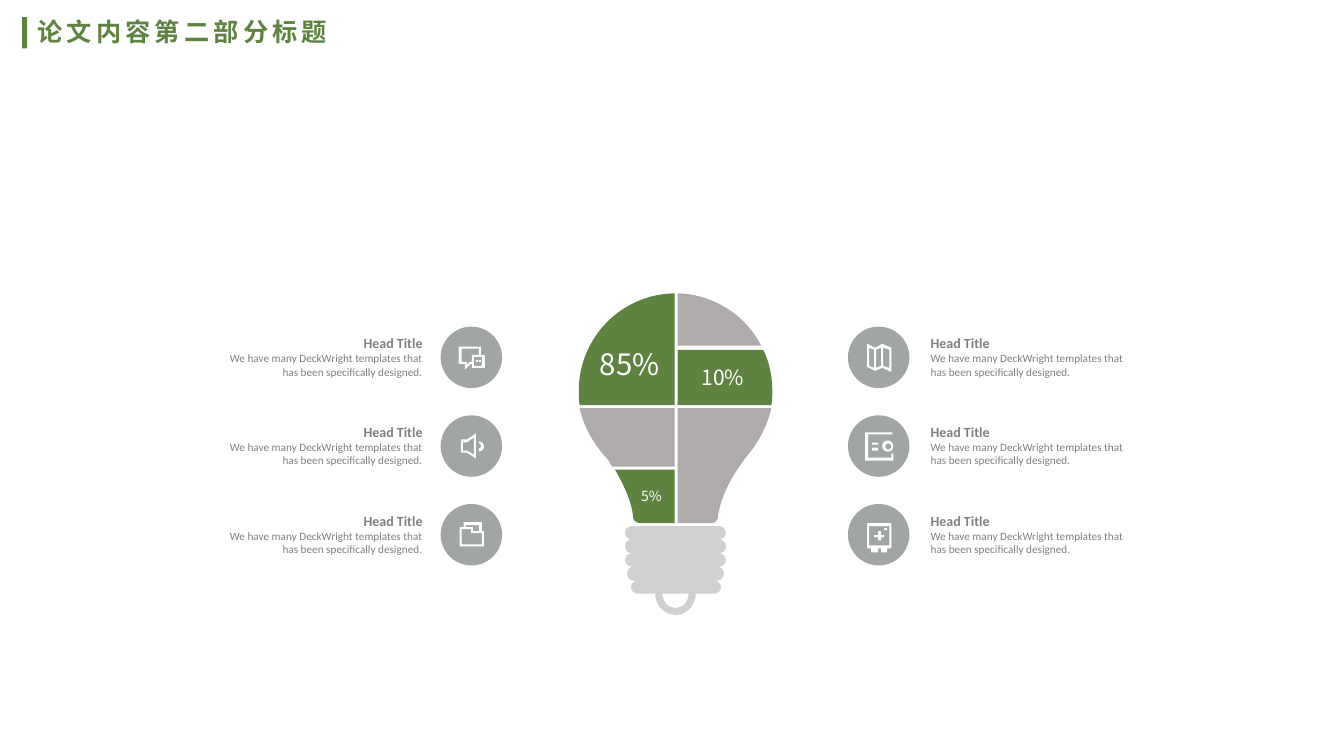
import math
from dataclasses import dataclass

from lxml import etree
from pptx import Presentation
from pptx.dml.color import RGBColor
from pptx.enum.shapes import MSO_SHAPE
from pptx.enum.text import MSO_ANCHOR, MSO_AUTO_SIZE, PP_ALIGN
from pptx.oxml.ns import qn
from pptx.util import Emu, Pt

PX = 9144  # EMU in one px, 100 px to the inch
OVAL, RECT = MSO_SHAPE.OVAL, MSO_SHAPE.RECTANGLE
LEFT, RIGHT = PP_ALIGN.LEFT, PP_ALIGN.RIGHT
TOP, MIDDLE = MSO_ANCHOR.TOP, MSO_ANCHOR.MIDDLE
GROW = MSO_AUTO_SIZE.SHAPE_TO_FIT_TEXT

# A contour holds (x, y) corners and six-number cubic curves
Contour = list[tuple[float, ...]]
Box = tuple[int, int, int, int]


@dataclass(frozen=True)
class Theme:
    green: str = "5E8240"
    warm_gray: str = "AFABAB"
    disc: str = "A1A5A3"
    base: str = "181717"
    text: str = "808080"
    white: str = "FFFFFF"
    latin: str = "Calibri"
    cjk: str = "Noto Sans CJK SC"
    title_size: int = 18
    head_size: int = 10
    body_size: int = 8
    share_sizes: tuple[int, int, int] = (21, 15, 10)


@dataclass(frozen=True)
class Icon:
    """Outlines and bars measured from the corner of the icon's disc."""
    outlines: list[list[Contour]]
    bars: tuple[Box, ...] = ()


@dataclass(frozen=True)
class Column:
    disc_x: int
    text_x: int
    align: PP_ALIGN
    icons: tuple[Icon, ...]


@dataclass(frozen=True)
class Pane:
    color: str
    contour: Contour


@dataclass(frozen=True)
class Share:
    text: str
    box: Box


THEME = Theme()


def arc(box: Box, start: int, end: int) -> Contour:
    """Points on the ellipse within left, top, right, bottom; degrees run clockwise."""
    left, top, right, bottom = box
    angles = [math.radians(start + (end - start) * step / 24) for step in range(25)]
    return [((left + right + (right - left) * math.cos(angle)) / 2,
             (top + bottom + (bottom - top) * math.sin(angle)) / 2) for angle in angles]


def flatten(contour: Contour) -> Contour:
    points: Contour = []
    for node in contour:
        if len(node) == 2:
            points.append(node)
            continue
        knots = [points[-1], node[:2], node[2:4], node[4:]]
        for step in range(1, 25):
            t = step / 24
            weights = ((1 - t) ** 3, 3 * t * (1 - t) ** 2, 3 * t * t * (1 - t), t ** 3)
            points.append(tuple(sum(w * knot[axis] for w, knot in zip(weights, knots))
                                for axis in (0, 1)))
    return points


def paint(shape, color: str, opacity: int = 100) -> None:
    shape.shadow.inherit = False
    shape.line.fill.background()
    shape.fill.solid()
    shape.fill.fore_color.rgb = RGBColor.from_string(color)
    if opacity < 100:
        tint = shape._element.spPr.find(".//" + qn("a:srgbClr"))
        etree.SubElement(tint, qn("a:alpha")).set("val", str(opacity * 1000))


def add_preset(page, kind: MSO_SHAPE, box: Box, color: str) -> None:
    paint(page.shapes.add_shape(kind, *(Emu(value * PX) for value in box)), color)


def add_outline(page, contours: list[Contour], color: str, x: int = 0, y: int = 0,
                opacity: int = 100) -> None:
    builder = None
    for contour in contours:
        points = [(round((x + px) * PX), round((y + py) * PX)) for px, py in flatten(contour)]
        if builder is None:
            builder = page.shapes.build_freeform(*points[0], scale=1.0)
        else:
            builder.move_to(*points[0])
        builder.add_line_segments(points[1:], close=True)
    paint(builder.convert_to_shape(), color, opacity)


def write(para, text: str, *, size: int, color: str, font: str = THEME.latin,
          bold: bool = False, align: PP_ALIGN = LEFT, spacing: int = 0) -> None:
    para.alignment = align
    span = para.add_run()
    span.text = text
    span.font.size, span.font.bold, span.font.name = Pt(size), bold, font
    span.font.color.rgb = RGBColor.from_string(color)
    if spacing:
        span._r.get_or_add_rPr().set("spc", str(spacing * 100))


def add_text_frame(page, box: Box, wrap: bool):
    frame = page.shapes.add_textbox(*(Emu(value * PX) for value in box)).text_frame
    frame.margin_left = frame.margin_top = frame.margin_right = frame.margin_bottom = 0
    frame.word_wrap, frame.auto_size, frame.vertical_anchor = wrap, GROW, TOP
    return frame


# Icons
CHAT = Icon([[
    [(40, 28), (40, 20), (18, 20), (18, 37), (24, 37), (24, 43), (30, 37), (31, 37),
     (31, 41), (44, 41), (44, 28)],
    [(29, 35), (26, 38), (26, 35), (21, 35), (21, 22), (38, 22), (38, 28), (31, 28), (31, 35)],
    [(41, 39), (33, 39), (33, 30), (41, 30)]]], ((35, 33, 2, 2), (38, 33, 2, 2)))
SPEAKER = Icon([
    [[(20, 24), (20, 37), (26, 37), (35, 43), (35, 18), (26, 24)],
     [(33, 22), (33, 39), (26, 35), (22, 35), (22, 27), (26, 27)]],
    [arc((33, 26, 43, 36), -90, 90) + arc((36, 28, 40, 33), 90, -90)]])
FOLDER = Icon([[
    [(41, 27), (41, 18), (23, 18), (23, 23), (19, 23), (19, 42), (43, 42), (43, 27)],
    [(25, 21), (38, 21), (38, 27), (32, 27), (32, 23), (25, 23)],
    [(41, 40), (21, 40), (21, 25), (30, 25), (30, 29), (41, 29)]]])
MAP = Icon([[
    [(34, 17), (27, 21), (19, 17), (19, 40), (27, 44), (34, 41), (43, 45), (43, 21)],
    [(28, 23), (33, 21), (33, 39), (28, 41)],
    [(21, 21), (26, 23), (26, 41), (21, 39)],
    [(41, 41), (35, 39), (35, 21), (41, 23)]]])
CARD = Icon([
    [[(43, 42), (20, 42), (20, 19), (44, 19), (44, 17), (17, 17), (17, 45), (45, 45),
      (45, 38), (43, 38)]],
    [arc((34, 25, 45, 36), 0, 360), arc((37, 28, 43, 34), 0, 360)]],
    ((24, 27, 6, 2), (24, 32, 6, 3)))
SAFE = Icon([
    [[(43, 19), (19, 19), (19, 44), (23, 44), (23, 48), (30, 48), (30, 44), (33, 44),
      (33, 48), (39, 48), (39, 44), (43, 44)],
     [(41, 41), (21, 41), (21, 22), (41, 22)]],
    [[(30, 36), (33, 36), (33, 33), (36, 33), (36, 31), (33, 31), (33, 27), (30, 27),
      (30, 31), (26, 31), (26, 33), (30, 33)]]], ((36, 24, 3, 2),))

COLUMNS = (Column(437, 214, RIGHT, (CHAT, SPEAKER, FOLDER)),
           Column(841, 923, LEFT, (MAP, CARD, SAFE)))
DISC_TOP, DISC_SIZE, ROW_PITCH = 324, 61, 88

# Bulb glass, its shares and the ridges (left, top, right, bottom) of its base
PANES = (
    Pane(THEME.green, [(628, 513), (628, 516, 631, 519, 635, 519), (669, 519), (669, 466),
                       (610, 466), (616, 477, 626, 494, 628, 513)]),
    Pane(THEME.warm_gray, [(575, 405), (579, 423, 588, 440, 603, 456),
                           (603, 456, 605, 459, 607, 463), (669, 463), (669, 405)]),
    Pane(THEME.green, [(669, 402), (669, 291), (616, 292, 574, 335, 574, 388),
                       (574, 393, 574, 397, 575, 402)]),
    Pane(THEME.warm_gray, [(672, 405), (672, 519), (706, 519), (709, 519, 712, 516, 712, 513),
                           (716, 483, 738, 457, 738, 456), (752, 440, 761, 423, 765, 405)]),
    Pane(THEME.warm_gray, [(755, 343), (740, 313, 708, 292, 672, 291), (672, 343)]),
    Pane(THEME.green, [(672, 347), (672, 402), (765, 402), (766, 397, 766, 393, 766, 388),
                       (766, 373, 763, 359, 757, 347)]),
)
SHARES = (Share("85%", (595, 343, 60, 35)), Share("10%", (696, 362, 43, 25)),
          Share("5%", (636, 484, 24, 17)))
RIDGES = ((620, 522, 720, 535), (620, 535, 720, 549), (620, 549, 720, 562),
          (622, 562, 718, 576), (626, 576, 715, 589))


def add_base(page) -> None:
    outline: Contour = []
    for left, top, right, bottom in RIDGES:
        outline += arc((right - 14, top, right, bottom), -90, 90)
    outline += arc((650, 568, 690, 610), 0, 180)
    for left, top, right, bottom in reversed(RIDGES):
        outline += arc((left, top, left + 14, bottom), 90, 270)
    add_outline(page, [outline, arc((657, 575, 683, 603), 0, 180)], THEME.base, opacity=20)


def add_column(page, column: Column) -> None:
    for row, icon in enumerate(column.icons):
        x, y = column.disc_x, DISC_TOP + row * ROW_PITCH
        add_preset(page, OVAL, (x, y, DISC_SIZE, DISC_SIZE), THEME.disc)
        for contours in icon.outlines:
            add_outline(page, contours, THEME.white, x, y)
        for left, top, width, height in icon.bars:
            add_preset(page, RECT, (x + left, y + top, width, height), THEME.white)
        frame = add_text_frame(page, (column.text_x, y + 8, 205, 43), True)
        write(frame.paragraphs[0], "Head Title", size=THEME.head_size, color=THEME.text,
              bold=True, align=column.align)
        write(frame.add_paragraph(),
              "We have many DeckWright templates that has been specifically designed.",
              size=THEME.body_size, color=THEME.text, align=column.align)


def add_title(page) -> None:
    title = page.shapes.title
    title.left, title.top, title.width, title.height = (
        Emu(value * PX) for value in (27, 11, 313, 40))
    frame = title.text_frame
    frame.word_wrap, frame.auto_size, frame.vertical_anchor = True, GROW, MIDDLE
    write(frame.paragraphs[0], "论文内容第二部分标题", size=THEME.title_size,
          color=THEME.green, bold=True, spacing=3)
    add_preset(page, RECT, (22, 17, 5, 31), THEME.green)


def main() -> None:
    deck = Presentation()
    deck.slide_width, deck.slide_height = Emu(1333 * PX), Emu(750 * PX)
    page = deck.slides.add_slide(deck.slide_layouts[5])
    add_title(page)
    add_base(page)
    for pane in PANES:
        add_outline(page, [pane.contour], pane.color)
    for share, size in zip(SHARES, THEME.share_sizes):
        frame = add_text_frame(page, share.box, False)
        write(frame.paragraphs[0], share.text, size=size, color=THEME.white, font=THEME.cjk)
    for column in COLUMNS:
        add_column(page, column)
    deck.save("out.pptx")


if __name__ == "__main__":
    main()
